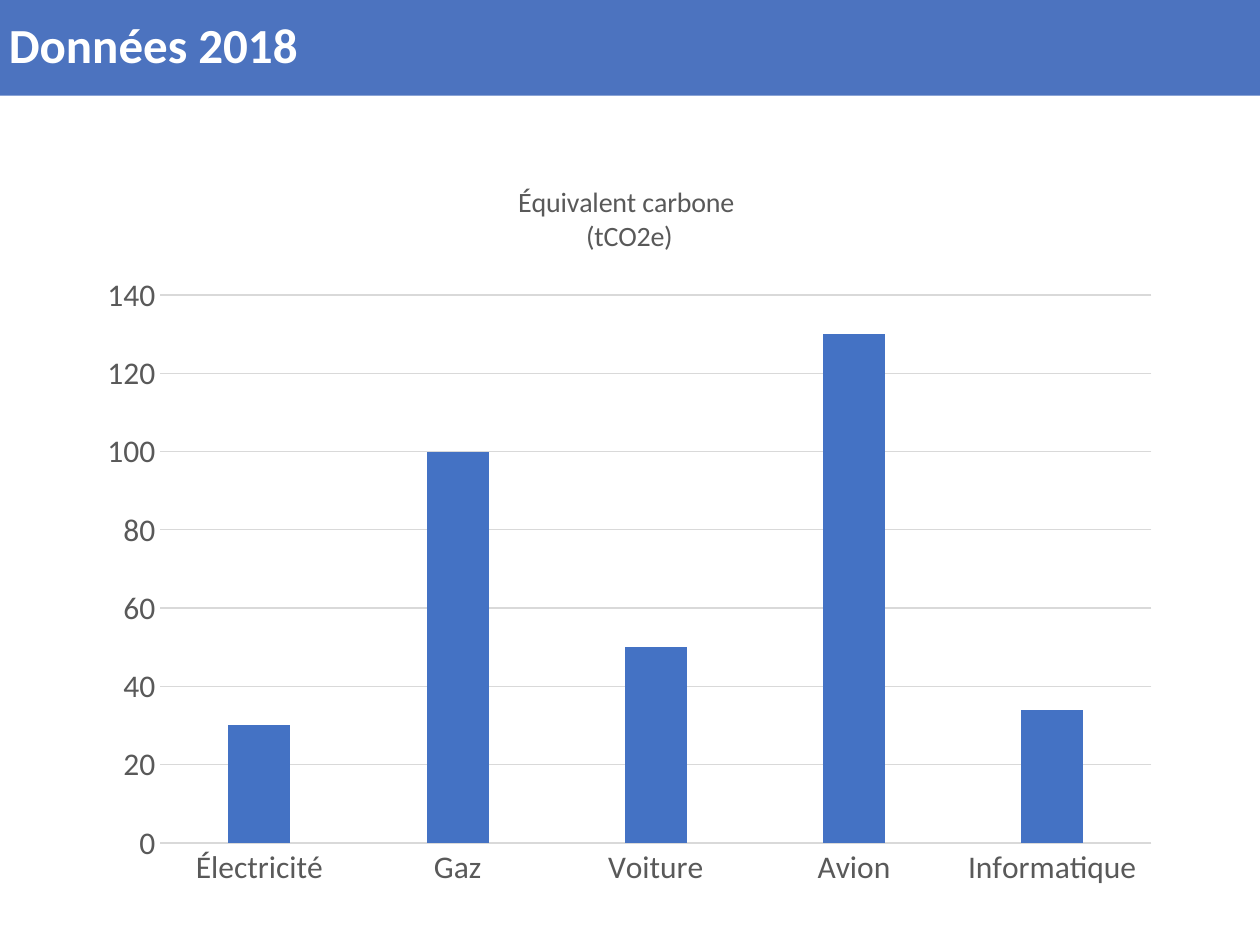
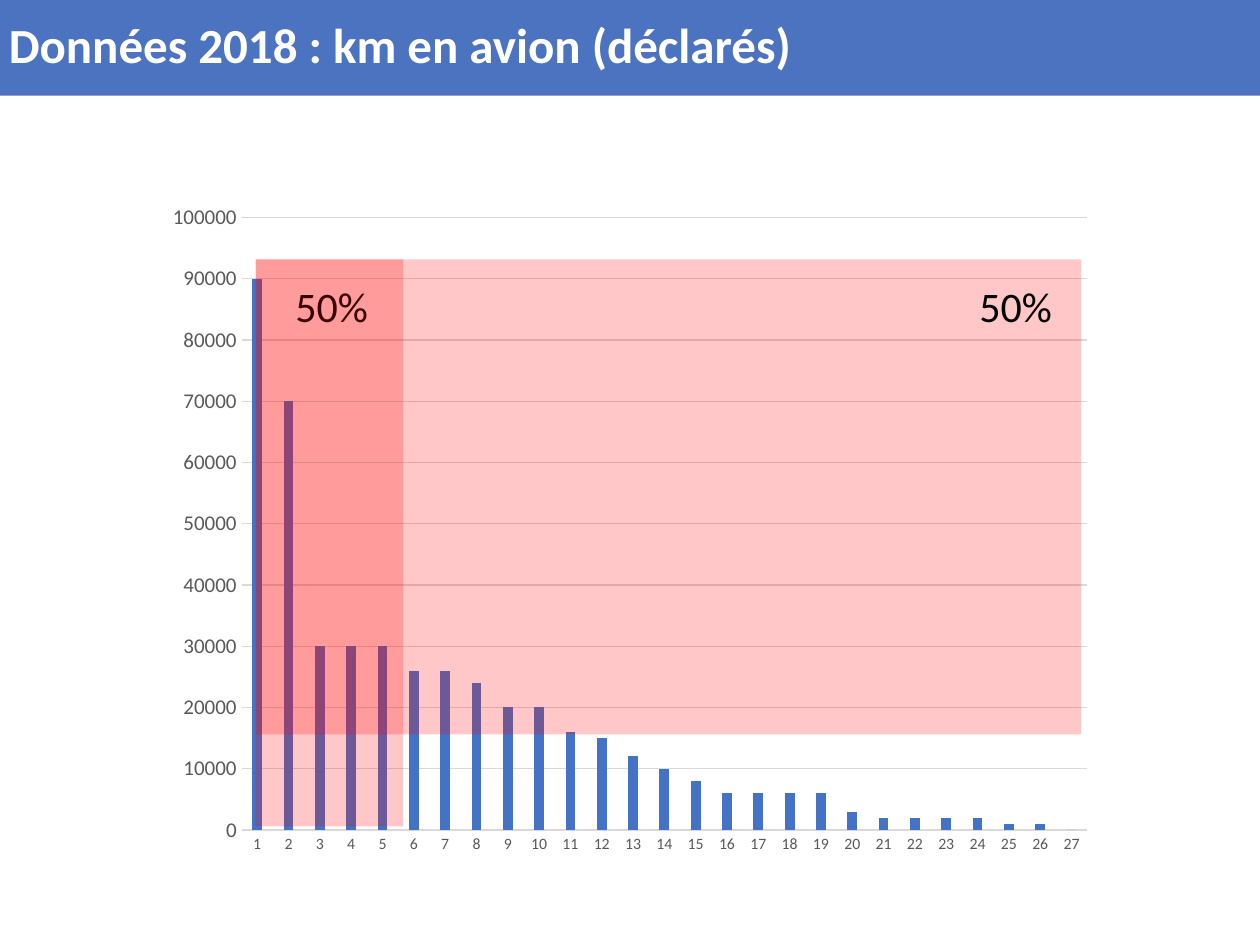
from lxml.etree import SubElement
from pptx import Presentation
from pptx.chart.data import CategoryChartData as ChartData
from pptx.dml.color import RGBColor as Rgb
from pptx.enum.chart import XL_CHART_TYPE as ChartType, XL_TICK_MARK as Tick
from pptx.enum.shapes import MSO_SHAPE as Preset
from pptx.enum.text import MSO_ANCHOR as Anchor, MSO_AUTO_SIZE as AutoSize, PP_ALIGN as Align
from pptx.oxml.ns import qn
from pptx.util import Inches, Pt

COLOURS = {
    "band": "4C73BF", "band text": "FFFFFF", "bar": "4472C4", "grid": "D9D9D9",
    "chart text": "595959", "text": "000000", "share": "FF0000",
}
FONT = "Calibri"
COLUMNS, ROWS = 100, 75
TITLE_ONLY = 5
SHARE_OPACITY = 22

BAND_FRAME = dict(
    margin_left=Inches(0.07), margin_right=Inches(0.07),
    margin_top=Inches(0.04), margin_bottom=Inches(0.04),
    vertical_anchor=Anchor.MIDDLE, word_wrap=True, auto_size=AutoSize.NONE,
)
BAND_PARAGRAPH = dict(line_spacing=0.9, alignment=Align.LEFT)
LABEL_FRAME = dict(word_wrap=False, auto_size=AutoSize.SHAPE_TO_FIT_TEXT)
BAR_PLOT = dict(gap_width=219, overlap=-27, vary_by_categories=False)

EMISSIONS = {"Électricité": 30, "Gaz": 100, "Voiture": 50, "Avion": 130, "Informatique": 34}
EMISSIONS_TITLE = "Équivalent carbone \n(tCO2e)"
FLIGHT_KM = [
    90000, 70000, 30000, 30000, 30000, 26000, 26000, 24000, 20000,
    20000, 16000, 15000, 12000, 10000, 8000, 6000, 6000, 6000,
    6000, 3000, 2000, 2000, 2000, 2000, 1000, 1000, 0,
]


def apply(target, values):
    for attribute, value in values.items():
        setattr(target, attribute, value)


class Deck:
    def __init__(self):
        self.presentation = Presentation()
        apply(self.presentation, dict(slide_width=Inches(10), slide_height=Inches(7.5)))
        self.column = self.presentation.slide_width / COLUMNS
        self.row = self.presentation.slide_height / ROWS
        self.slide = None

    def place(self, left, top, width, height):
        """Turn grid columns and rows into slide lengths."""
        return [int(left * self.column), int(top * self.row),
                int(width * self.column), int(height * self.row)]

    def style(self, font, size, colour, bold=False):
        apply(font, dict(name=FONT, size=Pt(size), bold=bold))
        font.color.rgb = Rgb.from_string(COLOURS[colour])

    def paint(self, shape, colour):
        shape.fill.solid()
        shape.fill.fore_color.rgb = Rgb.from_string(COLOURS[colour])
        shape.line.fill.background()

    def rule(self, line):
        line.width = Pt(0.75)
        line.color.rgb = Rgb.from_string(COLOURS["grid"])

    def add_slide(self, heading):
        layout = self.presentation.slide_layouts[TITLE_ONLY]
        self.slide = self.presentation.slides.add_slide(layout)
        band = self.slide.shapes.title
        place = self.place(0, 0, COLUMNS, 7.6)
        apply(band, dict(zip(("left", "top", "width", "height"), place)))
        self.paint(band, "band")
        apply(band.text_frame, BAND_FRAME)
        paragraph = band.text_frame.paragraphs[0]
        apply(paragraph, BAND_PARAGRAPH)
        run = paragraph.add_run()
        run.text = heading
        self.style(run.font, 28, "band text", bold=True)

    def add_columns(self, place, categories, series_name, values, scale, sizes, title=None):
        """Draw a column chart; scale is (maximum, step), sizes is (category, value) points."""
        data = ChartData()
        data.categories = categories
        data.add_series(series_name, values)
        chart = self.slide.shapes.add_chart(
            ChartType.COLUMN_CLUSTERED, *self.place(*place), data).chart
        self.style(chart.font, 10, "text")
        chart.has_legend = False
        chart.has_title = title is not None
        if title:
            frame = chart.chart_title.text_frame
            frame.text = title
            chart.chart_title.include_in_layout = False
            for paragraph in frame.paragraphs:
                for run in paragraph.runs:
                    self.style(run.font, 16, "chart text")

        plot = chart.plots[0]
        apply(plot, BAR_PLOT)
        bars = plot.series[0]
        bars.invert_if_negative = False
        self.paint(bars.format, "bar")

        for axis, size in zip((chart.category_axis, chart.value_axis), sizes):
            apply(axis, dict(major_tick_mark=Tick.NONE, minor_tick_mark=Tick.NONE))
            self.style(axis.tick_labels.font, size, "chart text")
        self.rule(chart.category_axis.format.line)
        maximum, step = scale
        apply(chart.value_axis, dict(minimum_scale=0, maximum_scale=maximum,
                                     major_unit=step, has_major_gridlines=True))
        self.rule(chart.value_axis.major_gridlines.format.line)
        chart.value_axis.format.line.fill.background()

    def add_share(self, width, height, label_left):
        """Group a translucent area, starting at the first bar, with its share label."""
        group = self.slide.shapes.add_group_shape().shapes
        area = group.add_shape(Preset.RECTANGLE, *self.place(20.3, 20.6, width, height))
        area.shadow.inherit = False
        self.paint(area, "share")
        colour = area.fill._xPr.find(qn("a:solidFill"))[0]
        SubElement(colour, qn("a:alpha"), val=str(SHARE_OPACITY * 1000))

        label = group.add_textbox(*self.place(label_left, 21.8, 8.6, 5))
        apply(label.text_frame, LABEL_FRAME)
        run = label.text_frame.paragraphs[0].add_run()
        run.text = " 50%"
        self.style(run.font, 24, "text")


def main():
    deck = Deck()

    deck.add_slide("Données 2018")
    deck.add_columns((6.8, 12.6, 86.3, 58.9), list(EMISSIONS), EMISSIONS_TITLE,
                     list(EMISSIONS.values()), scale=(140, 20), sizes=(18, 18),
                     title=EMISSIONS_TITLE)

    deck.add_slide("Données 2018 : km en avion (déclarés)")
    ranks = [str(rank) for rank in range(1, len(FLIGHT_KM) + 1)]
    deck.add_columns((12.2, 15.2, 75.6, 53.6), ranks, "Series 1", FLIGHT_KM,
                     scale=(100000, 10000), sizes=(9, 12))
    deck.add_share(width=11.7, height=45, label_left=21.7)
    deck.add_share(width=65.5, height=37.7, label_left=76)

    deck.presentation.save("out.pptx")


if __name__ == "__main__":
    main()
